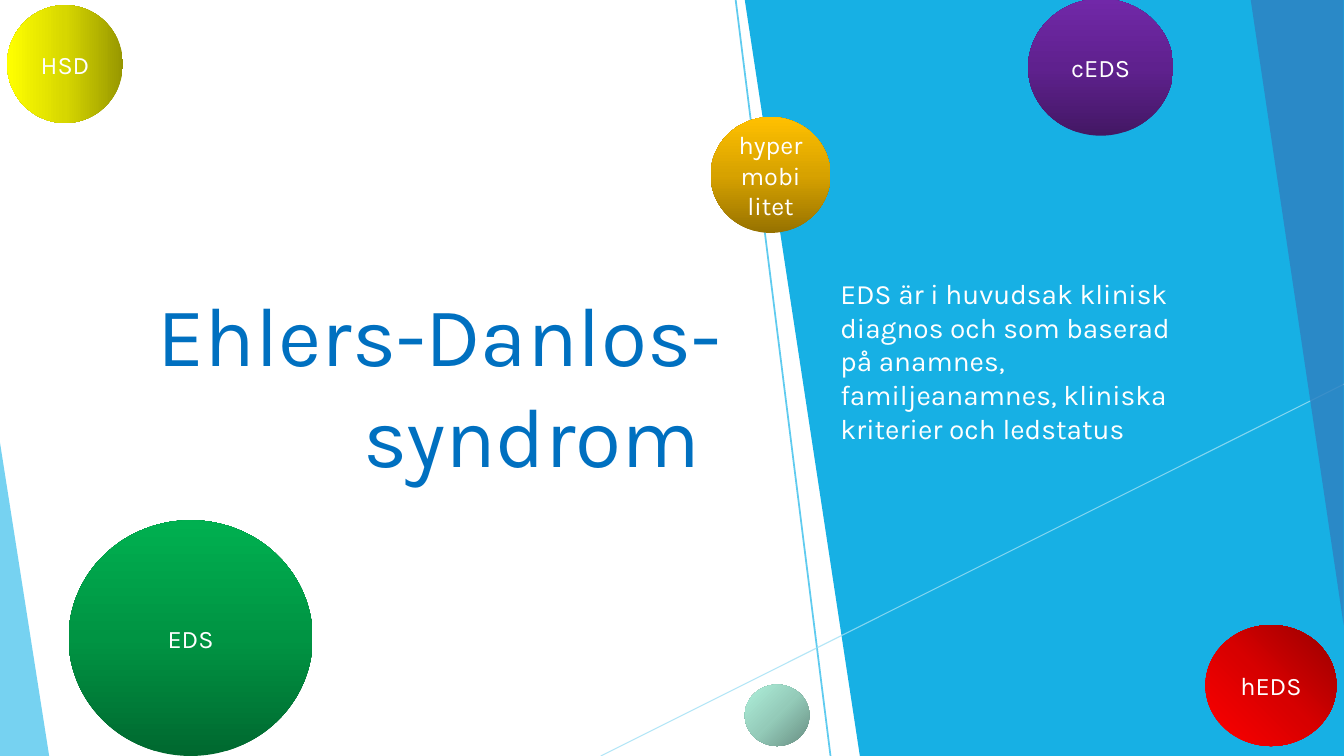
from lxml import etree
from pptx import Presentation
from pptx.dml.color import RGBColor
from pptx.enum.shapes import MSO_CONNECTOR, MSO_SHAPE as SHAPE
from pptx.enum.text import MSO_ANCHOR, PP_ALIGN as ALIGN
from pptx.oxml.ns import qn
from pptx.util import Cm, Pt

W, H = 33.87, 19.05
WHITE, SKY, PALE, AZURE = "FFFFFF", "17B0E4", "5FCBEF", "2E83C3"


def rgb(code):
    return RGBColor.from_string(code)


def add_alpha(element, percent):
    """Make the solid colour inside an element partly transparent."""
    for clr in element.iter(qn("a:srgbClr")):
        etree.SubElement(clr, qn("a:alpha"), val=str(percent * 1000))


class SlideBuilder:
    font = "Karla"

    def __init__(self, prs):
        self.slide = prs.slides.add_slide(prs.slide_layouts[6])
        self.shapes = self.slide.shapes

    def paint(self, sp, color, alpha=100):
        sp.shadow.inherit = False
        sp.line.fill.background()
        sp.fill.solid()
        sp.fill.fore_color.rgb = rgb(color)
        if alpha < 100:
            add_alpha(sp._element.spPr, alpha)

    def triangle(self, box, color, alpha, rotation=0):
        sp = self.shapes.add_shape(SHAPE.ISOSCELES_TRIANGLE, *map(Cm, box))
        sp.adjustments[0] = 0
        sp.rotation = rotation
        self.paint(sp, color, alpha)

    def polygon(self, points, color):
        start, *rest = [(Cm(x), Cm(y)) for x, y in points]
        builder = self.shapes.build_freeform(*start)
        builder.add_line_segments(rest, close=True)
        self.paint(builder.convert_to_shape(), color)

    def line(self, ends, color, width, alpha=100):
        cn = self.shapes.add_connector(MSO_CONNECTOR.STRAIGHT, *map(Cm, ends))
        cn.line.color.rgb = rgb(color)
        cn.line.width = Pt(width)
        if alpha < 100:
            add_alpha(cn._element.spPr, alpha)
        etree.SubElement(cn._element.spPr, qn("a:effectLst"))

    def put_text(self, sp, text, size, color, align, **frame):
        tf = sp.text_frame
        frame = {"word_wrap": True, "vertical_anchor": MSO_ANCHOR.MIDDLE, **frame}
        for name, value in frame.items():
            setattr(tf, name, value)
        p = tf.paragraphs[0]
        p.alignment = align
        r = p.add_run()
        r.text = text
        for name, value in {"name": self.font, "size": Pt(size)}.items():
            setattr(r.font, name, value)
        r.font.color.rgb = rgb(color)

    def text(self, box, text, size, color, align=ALIGN.LEFT, **frame):
        sp = self.shapes.add_textbox(*map(Cm, box))
        self.put_text(sp, text, size, color, align, **frame)

    def ball(self, box, colors, angle, label):
        """Gradient circle; without an angle the shade spreads from the top right."""
        sp = self.shapes.add_shape(SHAPE.FLOWCHART_CONNECTOR, *map(Cm, box))
        self.paint(sp, colors[0])
        solid = sp._element.spPr.find(qn("a:solidFill"))
        grad = etree.Element(qn("a:gradFill"), rotWithShape="1")
        stops = etree.SubElement(grad, qn("a:gsLst"))
        for i, color in enumerate(colors):
            gs = etree.SubElement(stops, qn("a:gs"), pos=str(i * 50000))
            etree.SubElement(gs, qn("a:srgbClr"), val=color)
        if angle is None:
            radial = etree.SubElement(grad, qn("a:path"))
            radial.set("path", "circle")
            etree.SubElement(radial, qn("a:fillToRect"), l="100000", b="100000")
        else:
            etree.SubElement(grad, qn("a:lin"), ang=str(angle * 60000), scaled="1")
        solid.getparent().replace(solid, grad)
        if label:
            self.put_text(sp, label, 18, WHITE, ALIGN.CENTER)


def main():
    prs = Presentation()
    prs.slide_width, prs.slide_height = Cm(W), Cm(H)
    s = SlideBuilder(prs)

    # Background panels and lines
    s.triangle((0, 11.15, 1.24, 7.9), PALE, 85)
    s.polygon([(18.77, 0), (W, 0), (W, H), (21.67, H)], SKY)
    s.line((18.54, 0, 20.93, H), PALE, 1.25)
    s.line((W, 9.68, 15.14, H), "9FE0F5", 0.75, 80)

    # Description, edge panel and title
    s.text((20.93, 5.38, 9.53, 8.53),
           "EDS är i huvudsak klinisk diagnos och som baserad på anamnes, "
           "familjeanamnes, kliniska kriterier och ledstatus",
           20, WHITE, margin_bottom=Cm(1.24))
    s.triangle((31.52, 0, 2.34, 15.75), AZURE, 85, rotation=180)
    s.text((2.31, 2.51, 16.1, 14.3), "Ehlers-Danlos-syndrom ", 60, "0070C0",
           ALIGN.RIGHT)

    # Balls: box, dark to bright colours, gradient angle, label
    balls = [
        ((1.73, 13.11, 6.15, 5.94), ("00682F", "009443", "00B050"), 270, "EDS"),
        ((0.18, 0.13, 2.92, 2.97), ("979700", "D7D700", "FFFF00"), 180, "HSD"),
        ((30.38, 15.75, 3.3, 3.05), ("970000", "D70000", "FF0000"), None, "hEDS"),
        ((25.91, -0.03, 3.66, 3.45), ("431764", "5F218E", "7128A8"), 270, "cEDS"),
        ((17.91, 2.95, 3.02, 2.92), ("977200", "D7A200", "FFC000"), 270,
         "hypermobilitet"),
        ((18.77, 17.25, 1.63, 1.55), ("688E82", "94CBB9", "AFF0DB"), 225, ""),
    ]
    for ball in balls:
        s.ball(*ball)

    prs.save("out.pptx")


if __name__ == "__main__":
    main()
